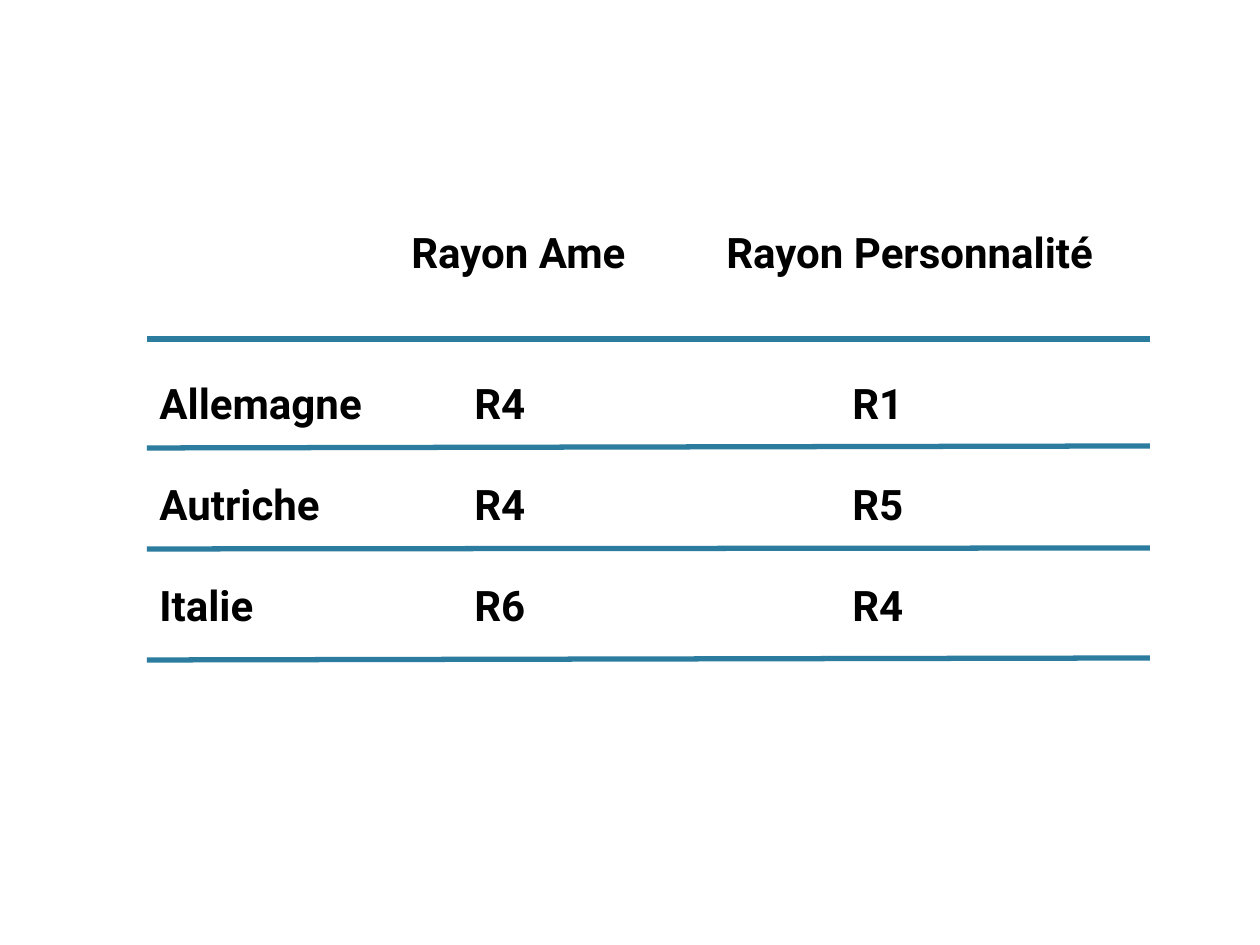
"""Build a slide listing the soul and personality rays of three countries."""
from dataclasses import dataclass

from lxml.etree import SubElement
from pptx import Presentation
from pptx.dml.color import RGBColor
from pptx.enum.shapes import MSO_CONNECTOR
from pptx.enum.text import MSO_AUTO_SIZE
from pptx.oxml.ns import qn
from pptx.slide import Slide
from pptx.text.text import TextFrame
from pptx.util import Emu, Pt

EMU_PER_PX = 914400 // 126
LEFT, RIGHT = 147, 1150
TOP, HEIGHT = 220, 471


@dataclass(frozen=True)
class Theme:
    text: RGBColor = RGBColor(0x00, 0x00, 0x00)
    rule: RGBColor = RGBColor(0x2C, 0x7C, 0x9F)
    background: RGBColor = RGBColor(0xFF, 0xFF, 0xFF)
    font: str = "Roboto"
    text_size: Pt = Pt(24)
    rule_width: Pt = Pt(3)


@dataclass(frozen=True)
class Row:
    cells: tuple[str, str, str]
    tabs: tuple[int, int]
    space_before: float


@dataclass(frozen=True)
class Rule:
    start_y: int
    end_y: int


THEME = Theme()
VALUE_TABS = (315, 693)
ROWS = (
    Row(("", "Rayon Ame", "Rayon Personnalité"), (252, 567), 0),
    Row(("Allemagne", "R4", "R1"), VALUE_TABS, 57.6),
    Row(("Autriche", "R4", "R5"), VALUE_TABS, 28.8),
    Row(("Italie", "R6", "R4"), VALUE_TABS, 28.8),
)
RULES = (Rule(339, 339), Rule(448, 446), Rule(549, 548), Rule(660, 658))


def px(length: int) -> Emu:
    """Turn pixels into EMU."""
    return Emu(length * EMU_PER_PX)


def write_row(frame: TextFrame, index: int, row: Row) -> None:
    """Write one row as a paragraph with its own tab stops."""
    para = frame.add_paragraph() if index else frame.paragraphs[0]
    para.text = "\t".join(row.cells)
    para.space_before = Pt(row.space_before)
    tab_list = SubElement(para._p.get_or_add_pPr(), qn("a:tabLst"))
    for position in row.tabs:
        SubElement(tab_list, qn("a:tab"), pos=str(px(position)), algn="l")
    para.font.name = THEME.font
    para.font.size = THEME.text_size
    para.font.bold = True
    para.font.color.rgb = THEME.text


def draw_rows(slide: Slide) -> None:
    """Draw the text box that holds every row."""
    box = slide.shapes.add_textbox(px(LEFT), px(TOP), px(RIGHT - LEFT), px(HEIGHT))
    frame = box.text_frame
    frame.word_wrap = True
    frame.auto_size = MSO_AUTO_SIZE.SHAPE_TO_FIT_TEXT
    for index, row in enumerate(ROWS):
        write_row(frame, index, row)


def draw_rule(slide: Slide, rule: Rule) -> None:
    """Draw one line beneath a row."""
    line = slide.shapes.add_connector(
        MSO_CONNECTOR.STRAIGHT, px(LEFT), px(rule.start_y), px(RIGHT), px(rule.end_y)
    )
    line.line.color.rgb = THEME.rule
    line.line.width = THEME.rule_width
    SubElement(line._element.spPr, qn("a:effectLst"))


def main() -> None:
    """Build and save the deck."""
    deck = Presentation()
    deck.slide_width, deck.slide_height = px(1260), px(945)
    slide = deck.slides.add_slide(deck.slide_layouts[6])
    slide.background.fill.solid()
    slide.background.fill.fore_color.rgb = THEME.background
    draw_rows(slide)
    for rule in RULES:
        draw_rule(slide, rule)
    deck.save("out.pptx")


if __name__ == "__main__":
    main()
